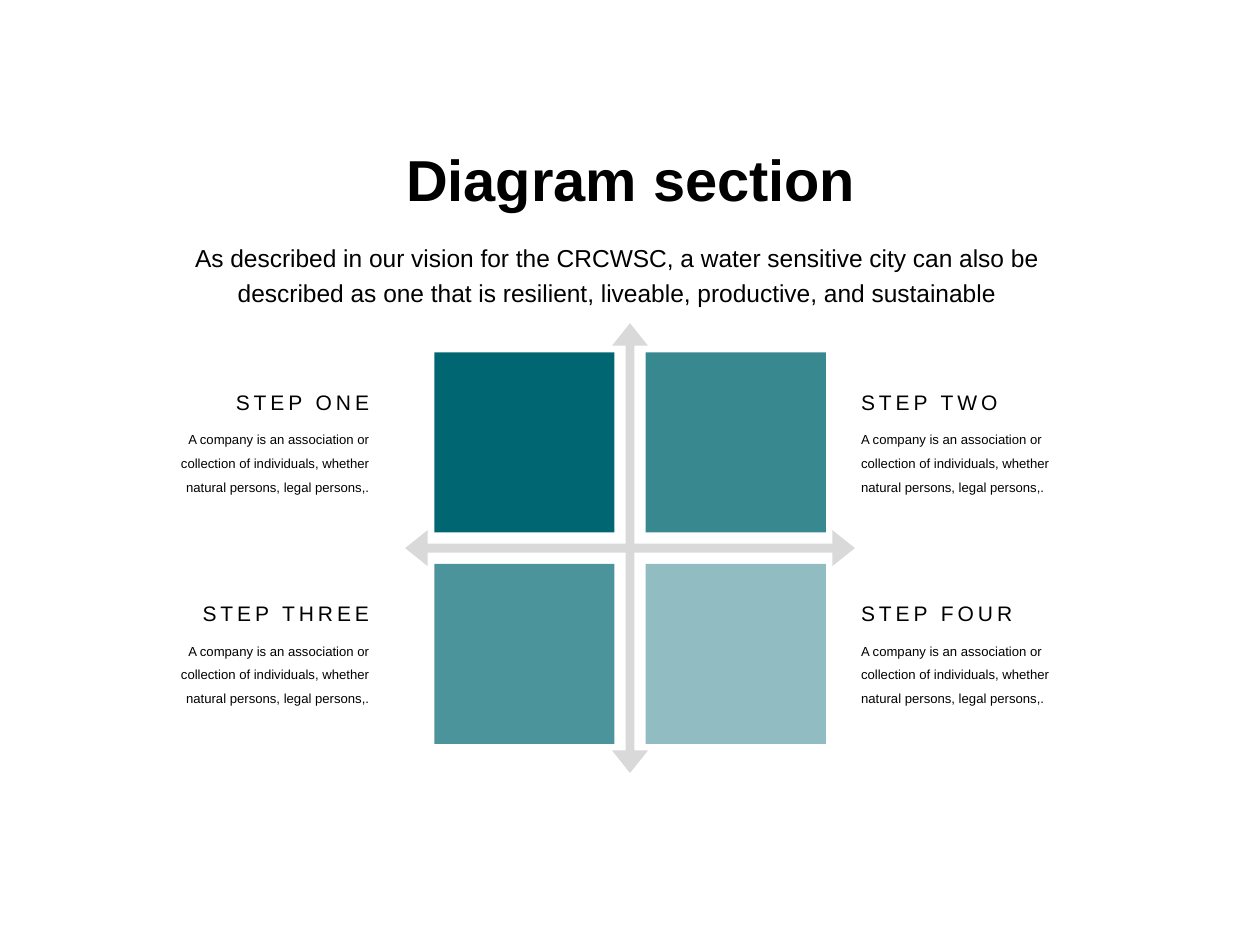
import pptx
import pptx.dml.color
import pptx.enum.shapes
import pptx.enum.text
import pptx.oxml.ns
import pptx.util
from lxml import etree

Pt = pptx.util.Pt
SHAPE = pptx.enum.shapes.MSO_SHAPE
ALIGN = pptx.enum.text.PP_ALIGN
TEAL, GREY, BLACK = "006772", "D9D9D9", "000000"
BODY = ("A company is an association or collection of individuals, "
        "whether natural persons, legal persons,.")
# label, label width, opacity of the square in percent
STEPS = [("STEP ONE", 173.5, 100), ("STEP TWO", 177, 78),
         ("STEP THREE", 210.5, 70), ("STEP FOUR", 193, 43)]


def color(code):
    return pptx.dml.color.RGBColor.from_string(code)


def write(slide, text, box, size, align=ALIGN.LEFT, bold=False, wrap=True,
          line=None, track=None):
    """Add a text box; track is the letter spacing in points."""
    frame = slide.shapes.add_textbox(*map(Pt, box)).text_frame
    frame.word_wrap = wrap
    frame.auto_size = pptx.enum.text.MSO_AUTO_SIZE.SHAPE_TO_FIT_TEXT
    para = frame.paragraphs[0]
    para.alignment = align
    if line:
        para.line_spacing = line
    run = para.add_run()
    run.text = text
    run.font.name = "Arial"
    run.font.size = Pt(size)
    run.font.bold = bold
    run.font.color.rgb = color(BLACK)
    if track:
        run.font._element.set("spc", str(round(track * 100)))


def draw(slide, kind, box, fill, alpha=100):
    shape = slide.shapes.add_shape(kind, *map(Pt, box))
    shape.shadow.inherit = False
    shape.line.fill.background()
    shape.fill.solid()
    shape.fill.fore_color.rgb = color(fill)
    if alpha < 100:
        node = shape.fill._xPr.find(".//" + pptx.oxml.ns.qn("a:srgbClr"))
        etree.SubElement(node, pptx.oxml.ns.qn("a:alpha"), val=str(alpha * 1000))
    return shape


def header(slide, left, top, width):
    write(slide, "Diagram section", (left + 283, top, 533, 87), 66,
          align=ALIGN.CENTER, bold=True, wrap=False)
    write(slide, "As described in our vision for the CRCWSC, a water sensitive "
          "city can also be described as one that is resilient, liveable, "
          "productive, and sustainable", (left, top + 106, width, 88), 28,
          align=ALIGN.CENTER, line=1.2)


def caption(slide, label, wide, left, top, width, align):
    """Add a step's label and body, both set to the same side."""
    start = left + width - wide if align == ALIGN.RIGHT else left
    write(slide, BODY, (left, top + 39.5, width, 89), 15, align=align, line=1.5)
    write(slide, label, (start, top, wide, 36.5), 24, align=align,
          wrap=False, track=4.5)


def matrix(slide, left, top, side):
    """Add the crossed arrows, four squares and their captions."""
    cross = draw(slide, SHAPE.QUAD_ARROW, (left, top, side, side), GREY)
    for spot, value in enumerate((0.02, 0.04, 0.05)):
        cross.adjustments[spot] = value
    edge, pitch, inset, text = 205.8, 241.6, 33.4, 258.5
    for spot, (label, wide, alpha) in enumerate(STEPS):
        row, col = divmod(spot, 2)
        x, y = left + inset + col * pitch, top + inset + row * pitch
        draw(slide, SHAPE.RECTANGLE, (x, y, edge, edge), TEAL, alpha)
        begin = left + side if col else left - 34 - text
        caption(slide, label, wide, begin, y + 38.6, text,
                ALIGN.LEFT if col else ALIGN.RIGHT)


def main():
    deck = pptx.Presentation()
    deck.slide_width, deck.slide_height = Pt(1440), Pt(1080)
    slide = deck.slides.add_slide(deck.slide_layouts[6])
    matrix(slide, 463, 369.4, 514)
    header(slide, 171.4, 161.3, 1066.3)
    deck.save("out.pptx")


if __name__ == "__main__":
    main()
